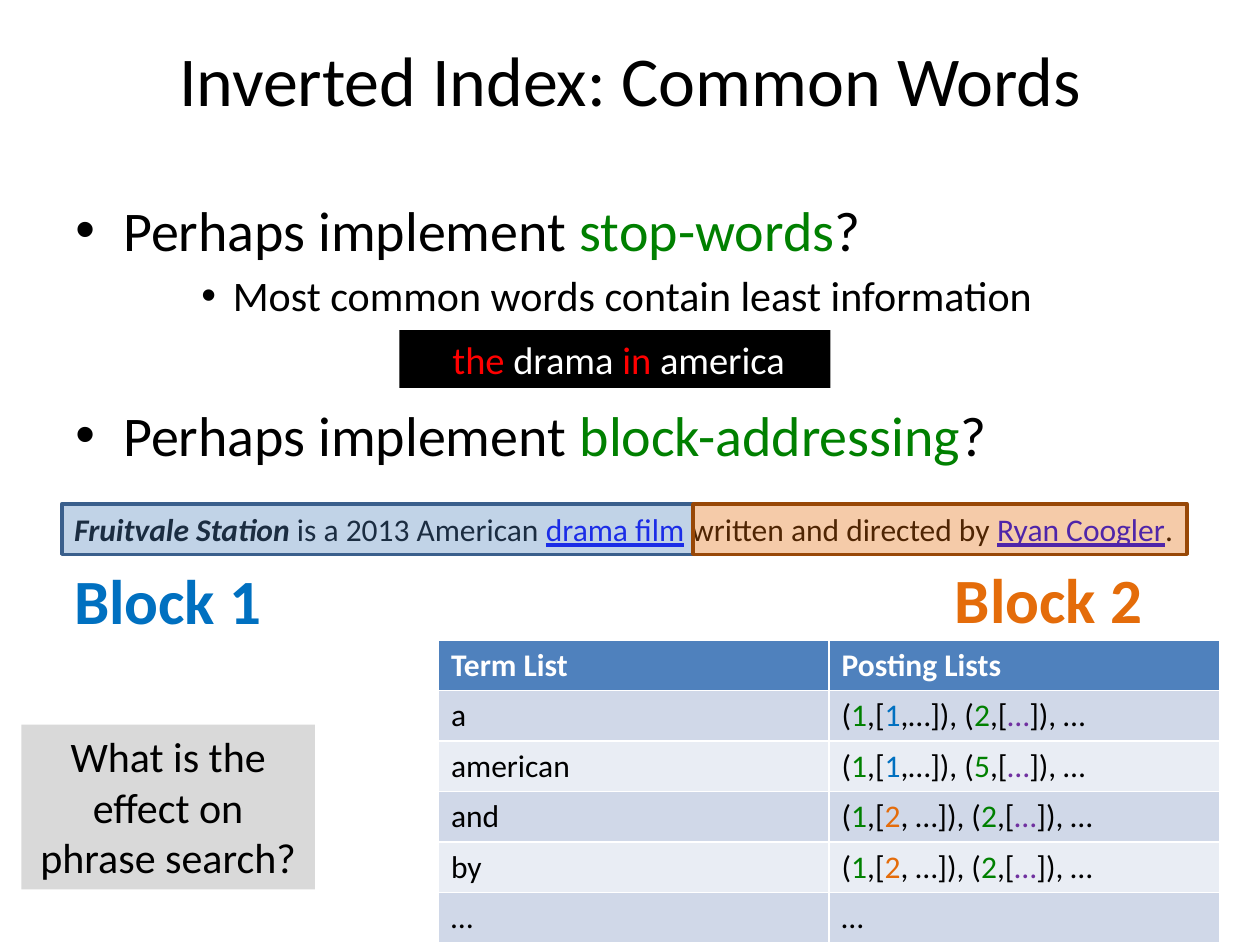
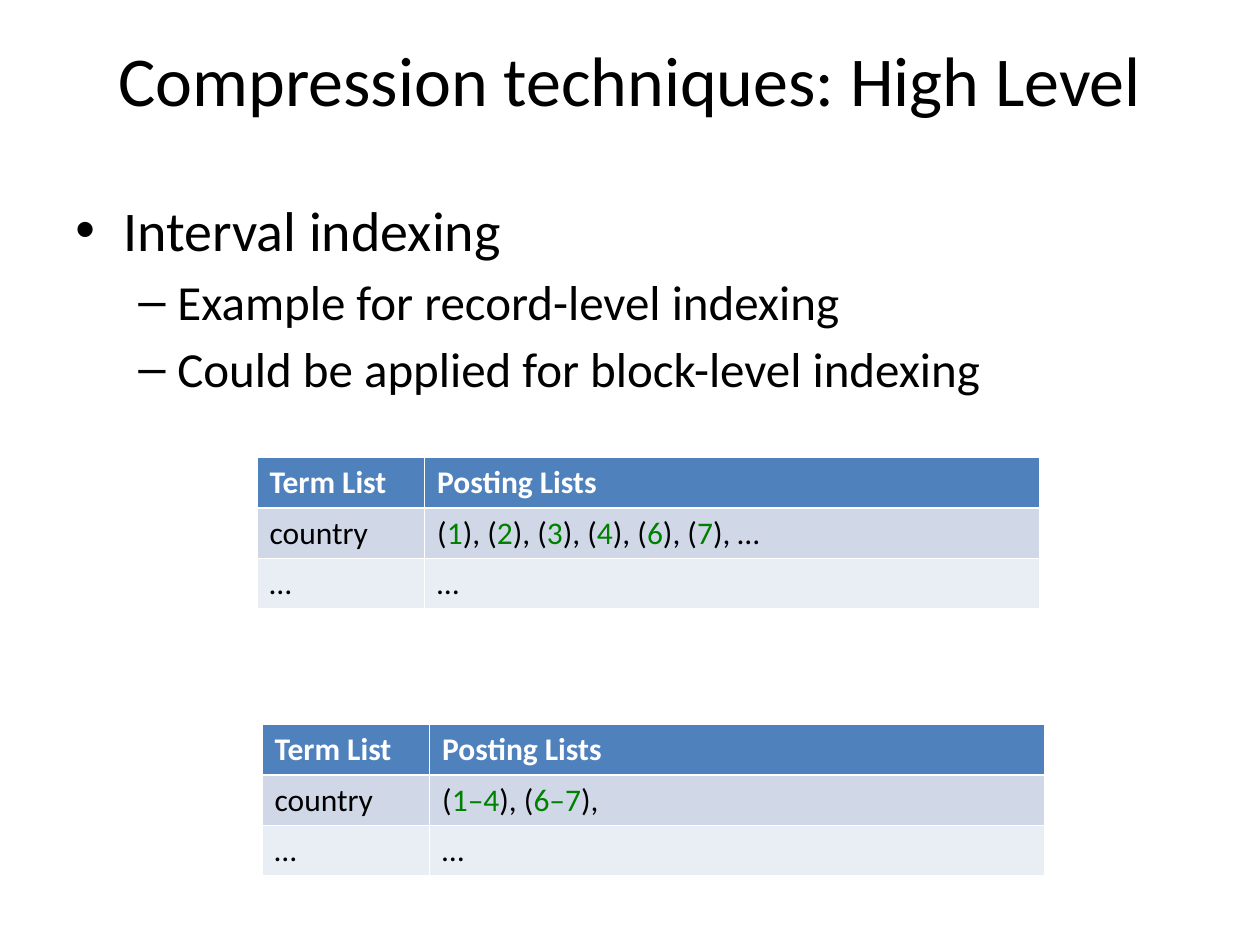
from lxml.etree import SubElement
from pptx import Presentation
from pptx.dml.color import RGBColor
from pptx.enum.shapes import MSO_SHAPE
from pptx.enum.text import MSO_ANCHOR, PP_ALIGN
from pptx.oxml.ns import qn
from pptx.util import Inches, Pt

FONT = "Calibri"
BLACK = RGBColor(0x00, 0x00, 0x00)
WHITE = RGBColor(0xFF, 0xFF, 0xFF)
RED = RGBColor(0xFF, 0x00, 0x00)
GREEN = RGBColor(0x00, 0x80, 0x00)
PURPLE = RGBColor(0x70, 0x30, 0xA0)
LINK_BLUE = RGBColor(0x00, 0x00, 0xFF)
BLOCK_BLUE = RGBColor(0x00, 0x70, 0xC0)
BLOCK_ORANGE = RGBColor(0xE4, 0x6C, 0x0A)
HEADER_BLUE = RGBColor(0x4F, 0x81, 0xBD)
EDGE_BLUE = RGBColor(0x3A, 0x5F, 0x8C)
EDGE_BROWN = RGBColor(0x98, 0x48, 0x07)
GREY = RGBColor(0xD9, 0xD9, 0xD9)
BANDS = RGBColor(0xD0, 0xD8, 0xE8), RGBColor(0xE9, 0xED, 0xF4)

BLOCK_COLOURS = {"1": BLOCK_BLUE, "2": BLOCK_ORANGE}
HEADER = ("Term List", "Posting Lists")
ROW_HEIGHT = 0.4

# level: (bullet, text size, left margin, hanging indent, space before)
BULLET_LEVELS = {
    0: ("•", 32, 0.38, 0.38, 0),
    1: ("–", 28, 0.81, 0.31, 5),
    2: ("•", 24, 1.25, 0.25, 4),
}


def block_postings(block, rest, document):
    """Return the coloured runs of one block-addressed posting list."""
    return [("(",), ("1", GREEN), (",[",), (block, BLOCK_COLOURS[block]),
            (rest + "]), (",), (document, GREEN), (",[",), ("…", PURPLE),
            ("]), …",)]


def record_postings(documents, ending):
    """Return the coloured runs of one record-level posting list."""
    runs = [("(",)]
    for document in documents:
        runs += [(document, GREEN), ("), (",)]
    return runs[:-1] + [(ending,)]


COMMON_WORDS = {
    "title": "Inverted Index: Common Words",
    "bullets": [
        (0, [("Perhaps implement ",), ("stop-words", GREEN), ("?",)], 0),
        (2, "Most common words contain least information", 4),
        (0, [("Perhaps implement ",), ("block-addressing", GREEN), ("?",)], 46),
    ],
    "tables": [
        ((3.48, 5.08), (3.1, 3.1), [
            ("a", block_postings("1", ",…", "2")),
            ("american", block_postings("1", ",…", "5")),
            ("and", block_postings("2", ", …", "2")),
            ("by", block_postings("2", ", …", "2")),
            ("…", "…"),
        ]),
    ],
}
COMPRESSION = {
    "title": "Compression techniques: High Level",
    "bullets": [
        (0, "Interval indexing", 0),
        (1, "Example for record-level indexing", 5),
        (1, "Could be applied for block-level indexing", 5),
    ],
    "tables": [
        ((2.04, 3.63), (1.33, 4.88), [
            ("country", record_postings("123467", "), …")), ("…", "…")]),
        ((2.08, 5.75), (1.33, 4.88), [
            ("country", record_postings(("1–4", "6–7"), "),")), ("…", "…")]),
    ],
}
QUERY = [("the", RED), (" drama ",), ("in ", RED), ("america",)]
SENTENCE = [
    ("Fruitvale Station", BLACK, "bi"), (" is a 2013 American ",),
    ("drama film", LINK_BLUE, "u"), (" written and directed by ",),
    ("Ryan Coogler", LINK_BLUE, "u"), (".",),
]
QUESTION = "What is the effect on phrase search?"
# caption, caption place, left and width of the block, fill, edge
BLOCKS = [
    ("Block 1", (0.49, 4.41), 0.49, 5.01, HEADER_BLUE, EDGE_BLUE, BLOCK_BLUE),
    ("Block 2", (7.48, 4.4), 5.5, 3.92, BLOCK_ORANGE, EDGE_BROWN, BLOCK_ORANGE),
]


def write(paragraph, content, size, colour=BLACK, bold=False):
    """Fill a paragraph with plain text or with (text, colour, style) runs."""
    paragraph.font.name = FONT
    paragraph.font.size = Pt(size)
    paragraph.font.bold = bold
    paragraph.font.color.rgb = colour
    for text, *look in [(content,)] if isinstance(content, str) else content:
        run = paragraph.add_run()
        run.text = text
        if look:
            run.font.color.rgb = look[0]
        for style in "".join(look[1:]):
            attribute = {"b": "bold", "i": "italic", "u": "underline"}[style]
            setattr(run.font, attribute, True)


def add_text(slide, box, content, size, colour=BLACK, bold=False):
    """Add a wrapping text box with one paragraph."""
    frame = slide.shapes.add_textbox(*map(Inches, box)).text_frame
    frame.word_wrap = True
    write(frame.paragraphs[0], content, size, colour, bold)


def add_box(slide, box, fill, edge=None, opacity=None):
    """Add a flat rectangle, optionally edged and see-through."""
    shape = slide.shapes.add_shape(MSO_SHAPE.RECTANGLE, *map(Inches, box))
    shape.shadow.inherit = False
    shape.fill.solid()
    shape.fill.fore_color.rgb = fill
    if edge is None:
        shape.line.fill.background()
    else:
        shape.line.color.rgb = edge
        shape.line.width = Pt(2)
    if opacity is not None:
        tint = shape.fill._xPr.find(qn("a:solidFill"))[0]
        SubElement(tint, qn("a:alpha"), val=str(opacity * 1000))
    return shape


def add_label_box(slide, box, fill, content, size, colour):
    """Add a filled rectangle with centred text and return its paragraph."""
    frame = add_box(slide, box, fill).text_frame
    frame.word_wrap = True
    frame.vertical_anchor = MSO_ANCHOR.TOP
    paragraph = frame.paragraphs[0]
    paragraph.alignment = PP_ALIGN.CENTER
    write(paragraph, content, size, colour)
    return paragraph


def add_bullets(slide, bullets):
    """Add the bulleted body text."""
    body = slide.shapes.add_textbox(*map(Inches, (0.5, 1.5, 9, 5.33)))
    frame = body.text_frame
    frame.word_wrap = True
    for index, (level, content, space) in enumerate(bullets):
        mark, size, margin, hanging, _ = BULLET_LEVELS[level]
        paragraph = frame.add_paragraph() if index else frame.paragraphs[0]
        paragraph.level = level
        paragraph.space_before = Pt(space)
        write(paragraph, content, size)
        properties = paragraph._p.get_or_add_pPr()
        properties.set("marL", str(Inches(margin)))
        properties.set("indent", str(-Inches(hanging)))
        bullet_font = properties.makeelement(qn("a:buFont"), {"typeface": "Arial"})
        bullet = properties.makeelement(qn("a:buChar"), {"char": mark})
        properties.find(qn("a:defRPr")).addprevious(bullet_font)
        bullet_font.addnext(bullet)


def add_postings_table(slide, place, widths, entries):
    """Add a table of terms and their posting lists."""
    rows = [HEADER, *entries]
    size = (sum(widths), ROW_HEIGHT * len(rows))
    table = slide.shapes.add_table(
        len(rows), len(widths), *map(Inches, place + size)).table
    for column, width in zip(table.columns, widths):
        column.width = Inches(width)
    for row, entry in enumerate(rows):
        is_header = row == 0
        for column, content in enumerate(entry):
            cell = table.cell(row, column)
            cell.fill.solid()
            cell.fill.fore_color.rgb = HEADER_BLUE if is_header else BANDS[(row - 1) % 2]
            write(cell.text_frame.paragraphs[0], content, 18,
                  WHITE if is_header else BLACK, is_header)


def add_slide(deck, content):
    """Add a slide with its title and bullets."""
    slide = deck.slides.add_slide(deck.slide_layouts[5])
    title = slide.shapes.title
    title.left, title.top, title.width, title.height = map(Inches, (0.5, 0, 9, 1.25))
    title.text_frame.vertical_anchor = MSO_ANCHOR.MIDDLE
    title.text_frame.paragraphs[0].alignment = PP_ALIGN.CENTER
    write(title.text_frame.paragraphs[0], content["title"], 40)
    add_bullets(slide, content["bullets"])
    return slide


def add_block_example(slide):
    """Add the stop-word query, the sentence in blocks and the question."""
    query = add_label_box(slide, (3.17, 2.62, 3.42, 0.46), BLACK, QUERY, 22, WHITE)
    query._p.get_or_add_pPr().set("marL", str(Inches(0.06)))
    add_text(slide, (0.49, 4, 9.33, 0.4), SENTENCE, 18)
    for caption, place, left, width, fill, edge, colour in BLOCKS:
        add_box(slide, (left, 4, width, 0.4), fill, edge, 35)
        add_text(slide, place + (2.26, 0.71), caption, 36, colour, True)
    add_label_box(slide, (0.17, 5.75, 2.33, 1.31), GREY, QUESTION, 24, BLACK)


def main():
    """Build both slides and save the deck."""
    deck = Presentation()
    deck.slide_width, deck.slide_height = Inches(10), Inches(7.5)
    for content in (COMMON_WORDS, COMPRESSION):
        slide = add_slide(deck, content)
        if content is COMMON_WORDS:
            add_block_example(slide)
        for table in content["tables"]:
            add_postings_table(slide, *table)
    deck.save("out.pptx")


if __name__ == "__main__":
    main()
